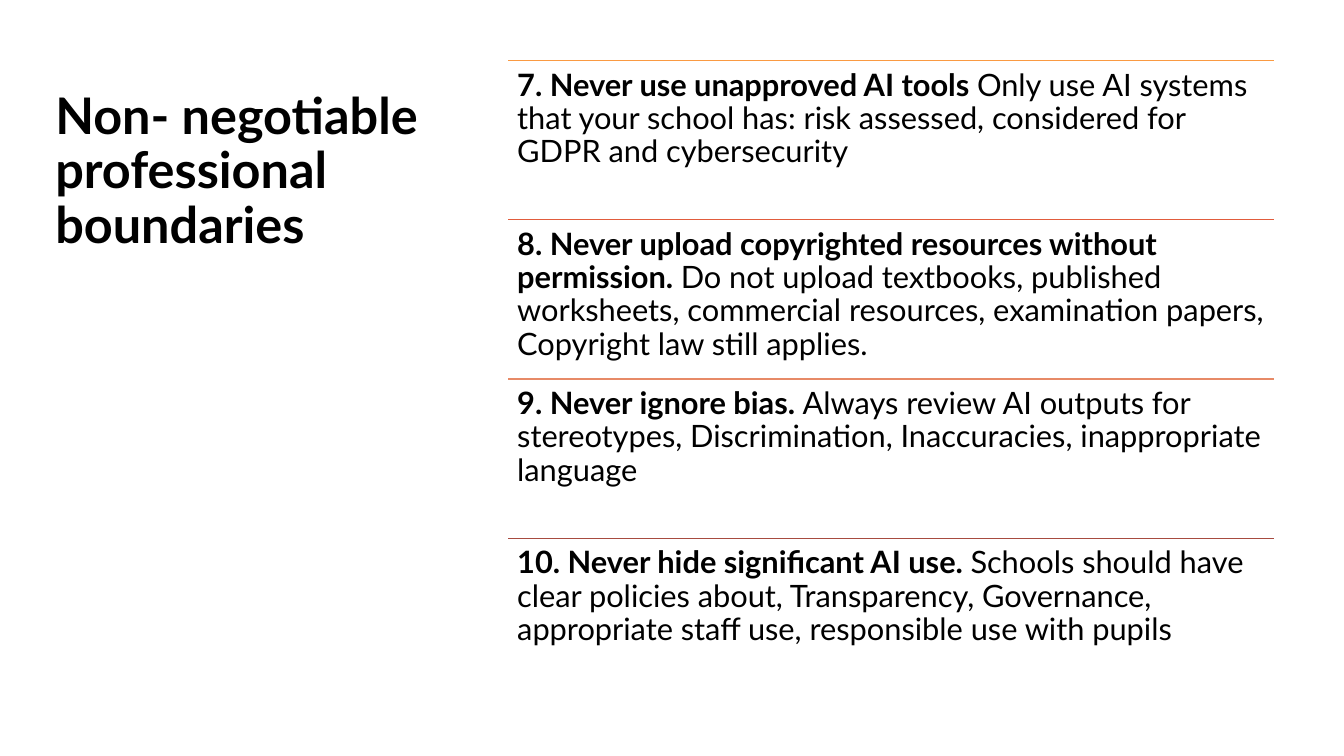
from lxml import etree
from pptx import Presentation
from pptx import util as u
from pptx.dml.color import RGBColor
from pptx.enum import shapes, text
from pptx.oxml.ns import qn

PX = 9144  # 100 px to the inch
FONT = "Lato"
HUES = {
    "ink": "000000",
    "amber": "FA9A42",
    "red": "E15C3D",
    "coral": "E78A67",
    "brick": "A74B40",
}
RULES = [
    ("amber", "7. Never use unapproved AI tools ",
     "Only use AI systems that your school has: risk assessed, "
     "considered for GDPR and cybersecurity"),
    ("red", "8. Never upload copyrighted resources without permission. ",
     "Do not upload textbooks, published worksheets, commercial resources, "
     "examination papers, Copyright law still applies."),
    ("coral", "9. Never ignore bias. ",
     "Always review AI outputs for stereotypes, Discrimination, "
     "Inaccuracies, inappropriate language"),
    ("brick", "10. Never hide significant AI use. ",
     "Schools should have clear policies about, Transparency, Governance, "
     "appropriate staff use, responsible use with pupils"),
]


def px(n):
    return u.Emu(n * PX)


def hue(name):
    return RGBColor.from_string(HUES[name])


def add_text(slide, box, parts, size, pad):
    """Place one paragraph made of (words, bold) parts."""
    frame = slide.shapes.add_textbox(*map(px, box)).text_frame
    frame.word_wrap = True
    frame.vertical_anchor = text.MSO_ANCHOR.TOP
    frame.margin_left = frame.margin_right = px(pad[0])
    frame.margin_top = frame.margin_bottom = px(pad[1])
    para = frame.paragraphs[0]
    para.line_spacing = 0.9
    para.font.name = FONT
    para.font.size = u.Pt(size)
    para.font.color.rgb = hue("ink")
    for words, bold in parts:
        run = para.add_run()
        run.text = words
        run.font.bold = bold


def add_rule(slide, x, y, w, tint):
    line = slide.shapes.add_connector(
        shapes.MSO_CONNECTOR.STRAIGHT, px(x), px(y), px(x + w), px(y))
    line.line.color.rgb = hue(tint)
    line.line.width = u.Pt(1)
    etree.SubElement(line._element.spPr, qn("a:effectLst"))


def add_title(slide, box):
    words = "Non- negotiable professional boundaries"
    add_text(slide, box, [(words, True)], 36, (10, 5))


def add_list(slide, box):
    """Stack the rules in equal rows, each under a coloured line."""
    x, y, w, h = box
    row = h // len(RULES)
    for i, (tint, head, body) in enumerate(RULES):
        top = y + h * i // len(RULES)
        add_rule(slide, x, top, w, tint)
        add_text(slide, (x, top, w, row),
                 [(head, True), (body, False)], 22, (9, 9))


def main():
    deck = Presentation()
    deck.slide_width, deck.slide_height = px(1333), px(750)
    slide = deck.slides.add_slide(deck.slide_layouts[6])
    # Left: heading
    add_title(slide, (45, 85, 441, 232))
    # Right: numbered boundaries
    add_list(slide, (504, 60, 760, 633))
    deck.save("out.pptx")


if __name__ == "__main__":
    main()
